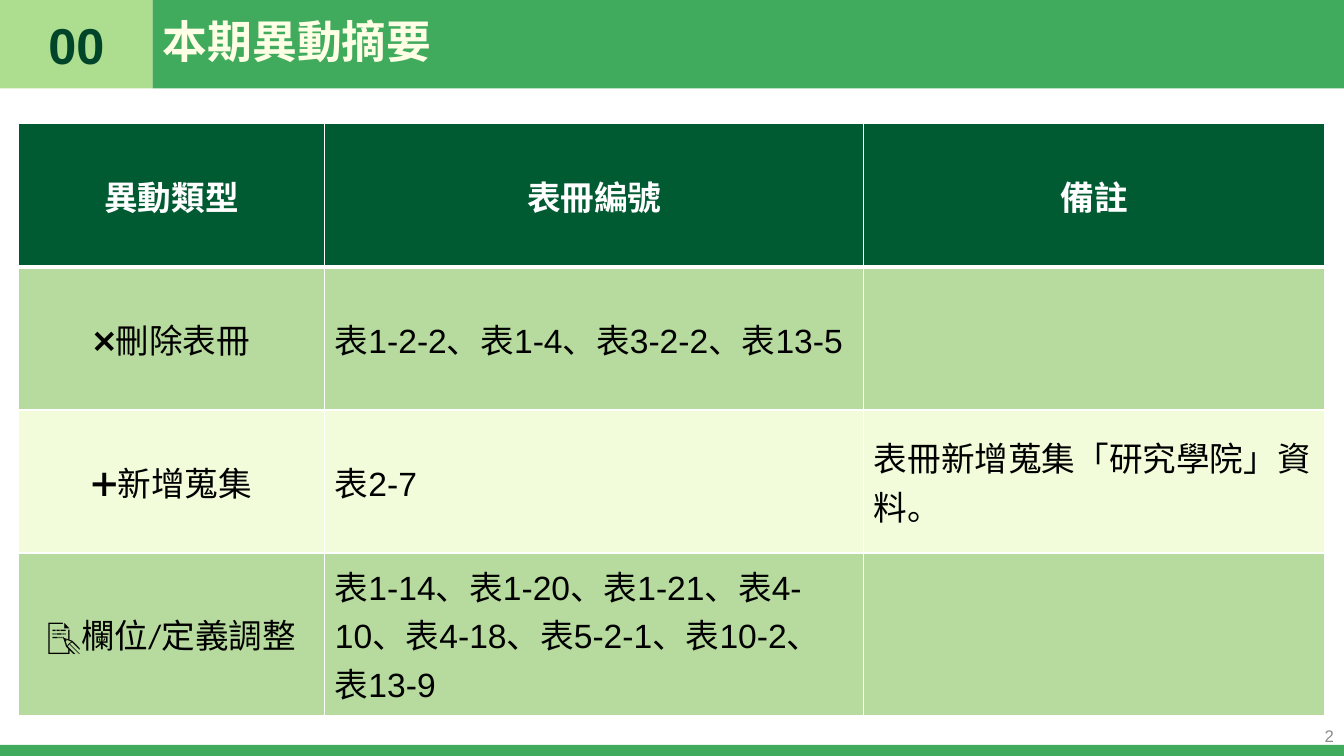
from dataclasses import dataclass

from lxml import etree
from pptx import Presentation
from pptx.dml.color import RGBColor
from pptx.enum.shapes import MSO_SHAPE
from pptx.enum.text import MSO_ANCHOR, MSO_AUTO_SIZE, PP_ALIGN
from pptx.oxml.ns import qn
from pptx.slide import Slide
from pptx.table import _Cell
from pptx.text.text import TextFrame, _Paragraph
from pptx.util import Pt

RECTANGLE = MSO_SHAPE.RECTANGLE
MIDDLE = MSO_ANCHOR.MIDDLE
NO_AUTOFIT = MSO_AUTO_SIZE.NONE
LEFT, CENTER, RIGHT = PP_ALIGN.LEFT, PP_ALIGN.CENTER, PP_ALIGN.RIGHT

WHITE = RGBColor(0xFF, 0xFF, 0xFF)
BLACK = RGBColor(0x00, 0x00, 0x00)
CREAM = RGBColor(0xFF, 0xFF, 0xE5)
GREY = RGBColor(0x8C, 0x8C, 0x8C)
GREEN = RGBColor(0x41, 0xAB, 0x5D)
LIGHT_GREEN = RGBColor(0xAD, 0xDD, 0x8E)
DEEP_GREEN = RGBColor(0x00, 0x45, 0x29)
HEADER_GREEN = RGBColor(0x00, 0x5A, 0x32)
BAND_GREEN = RGBColor(0xB7, 0xDB, 0x9E)
BAND_CREAM = RGBColor(0xF2, 0xFC, 0xDA)

ARIAL, CALIBRI = "Arial", "Calibri"
SLIDE_WIDTH, SLIDE_HEIGHT = 960, 540
BANNER_HEIGHT, NUMBER_WIDTH = 63.2, 109
FOOTER_HEIGHT = 8
COLUMN_WIDTHS = (219, 385, 329)
ROW_HEIGHTS = (102.2, 102.2, 102.2, 116)


@dataclass(frozen=True)
class Box:
    left: float
    top: float
    width: float
    height: float

    def lengths(self) -> tuple[Pt, Pt, Pt, Pt]:
        return Pt(self.left), Pt(self.top), Pt(self.width), Pt(self.height)


@dataclass(frozen=True)
class Style:
    size: float
    color: RGBColor
    bold: bool = False


@dataclass(frozen=True)
class Run:
    text: str
    font: str = ARIAL


@dataclass(frozen=True)
class Row:
    cells: tuple[tuple[Run, ...], ...]
    fill: RGBColor


HEADER_STYLE = Style(24, WHITE, True)
CELL_STYLE = Style(24, BLACK)
NUMBER_BOX = Box(0, 0, NUMBER_WIDTH, BANNER_HEIGHT)
TITLE_BOX = Box(NUMBER_WIDTH, 0, 836.5, BANNER_HEIGHT)
TABLE_BOX = Box(13, 88.5, sum(COLUMN_WIDTHS), sum(ROW_HEIGHTS))
PAGE_BOX = Box(744, 511.2, 216, 28.8)
BANDS = (
    (Box(0, SLIDE_HEIGHT - FOOTER_HEIGHT, SLIDE_WIDTH, FOOTER_HEIGHT), GREEN),
    (NUMBER_BOX, LIGHT_GREEN),
    (Box(NUMBER_WIDTH, 0, SLIDE_WIDTH - NUMBER_WIDTH, BANNER_HEIGHT), GREEN),
)
ROWS = (
    Row(((Run("異動類型", CALIBRI),), (Run("表冊編號"),), (Run("備註"),)), HEADER_GREEN),
    Row(((Run("❌刪除表冊", CALIBRI),), (Run("表1-2-2、表1-4、表3-2-2、表13-5"),), ()), BAND_GREEN),
    Row(
        (
            (Run("➕"), Run("新增蒐集", CALIBRI)),
            (Run("表2-7"),),
            (Run("表冊新增蒐集「研究學院」資料。"),),
        ),
        BAND_CREAM,
    ),
    Row(
        (
            (Run("📝"), Run("欄位/", CALIBRI), Run("定義調整")),
            (Run("表1-14、表1-20、表1-21、表4-10、表4-18、表5-2-1、表10-2、表13-9"),),
            (),
        ),
        BAND_GREEN,
    ),
)


def add_runs(paragraph: _Paragraph, runs: tuple[Run, ...], style: Style, alignment: PP_ALIGN) -> None:
    paragraph.alignment = alignment
    for item in runs:
        run = paragraph.add_run()
        run.text = item.text
        run.font.name = item.font
        run.font.size = Pt(style.size)
        run.font.bold = style.bold
        run.font.color.rgb = style.color


def write_line(frame: TextFrame, text: str, style: Style, alignment: PP_ALIGN) -> _Paragraph:
    frame.word_wrap = True
    frame.auto_size = NO_AUTOFIT
    frame.vertical_anchor = MIDDLE
    paragraph = frame.paragraphs[0]
    add_runs(paragraph, (Run(text),), style, alignment)
    return paragraph


def add_band(slide: Slide, box: Box, color: RGBColor) -> None:
    shape = slide.shapes.add_shape(RECTANGLE, *box.lengths())
    shape.shadow.inherit = False
    shape.fill.solid()
    shape.fill.fore_color.rgb = color
    shape.line.fill.background()


def set_borders(cell: _Cell, widths: dict[str, float]) -> None:
    properties = cell._tc.get_or_add_tcPr()
    for index, (side, width) in enumerate(widths.items()):
        line = etree.Element(qn(f"a:{side}"), w=str(Pt(width)))
        fill = etree.SubElement(line, qn("a:solidFill"))
        etree.SubElement(fill, qn("a:srgbClr"), val=str(WHITE))
        properties.insert(index, line)


def add_changes_table(slide: Slide) -> None:
    table = slide.shapes.add_table(len(ROWS), len(COLUMN_WIDTHS), *TABLE_BOX.lengths()).table
    table.horz_banding = False
    for column, width in zip(table.columns, COLUMN_WIDTHS):
        column.width = Pt(width)
    for index, (row, height) in enumerate(zip(ROWS, ROW_HEIGHTS)):
        table.rows[index].height = Pt(height)
        is_header = index == 0
        for position, runs in enumerate(row.cells):
            cell = table.cell(index, position)
            cell.vertical_anchor = MIDDLE
            cell.fill.solid()
            cell.fill.fore_color.rgb = row.fill
            set_borders(
                cell,
                {"lnL": 1, "lnR": 1, "lnT": 3 if index == 1 else 1, "lnB": 3 if is_header else 1},
            )
            alignment = CENTER if is_header or position == 0 else LEFT
            style = HEADER_STYLE if is_header else CELL_STYLE
            add_runs(cell.text_frame.paragraphs[0], runs, style, alignment)


def main() -> None:
    presentation = Presentation()
    presentation.slide_width = Pt(SLIDE_WIDTH)
    presentation.slide_height = Pt(SLIDE_HEIGHT)
    slide = presentation.slides.add_slide(presentation.slide_layouts[1])
    for box, color in BANDS:
        add_band(slide, box, color)
    add_changes_table(slide)

    title, number = slide.shapes.title, slide.placeholders[1]
    for placeholder, box in ((title, TITLE_BOX), (number, NUMBER_BOX)):
        placeholder.left, placeholder.top, placeholder.width, placeholder.height = box.lengths()
        slide.shapes._spTree.append(placeholder._element)

    heading = write_line(title.text_frame, "本期異動摘要", Style(32, CREAM, True), LEFT)
    heading.line_spacing = 0.9
    section = write_line(number.text_frame, "00", Style(36, DEEP_GREEN, True), CENTER)
    section.space_before = Pt(10)
    properties = section._p.get_or_add_pPr()
    properties.set("marL", "0")
    properties.set("indent", "0")
    etree.SubElement(properties, qn("a:buNone"))

    page = slide.shapes.add_textbox(*PAGE_BOX.lengths())
    write_line(page.text_frame, "2", Style(12, GREY), RIGHT)
    presentation.save("out.pptx")


if __name__ == "__main__":
    main()
